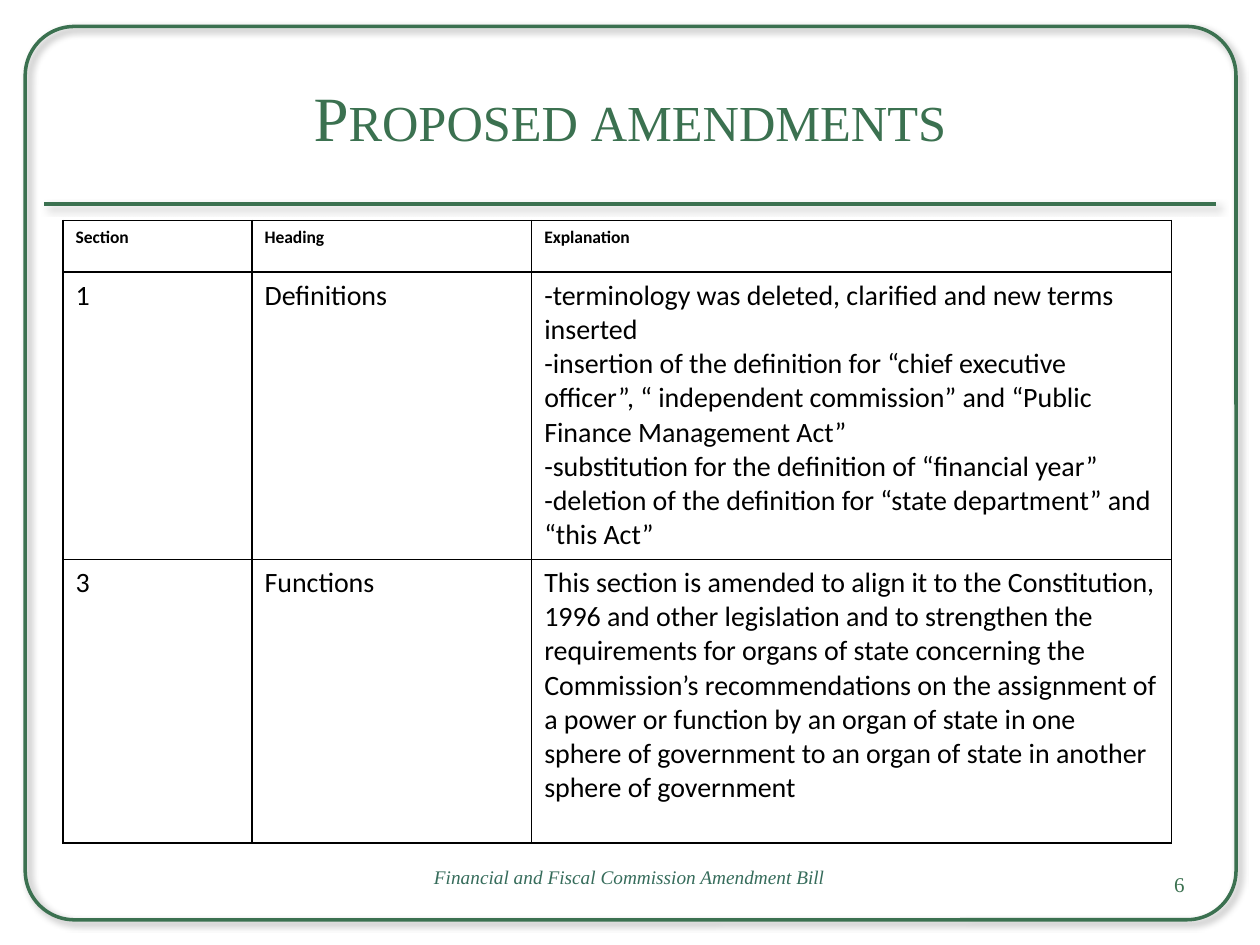
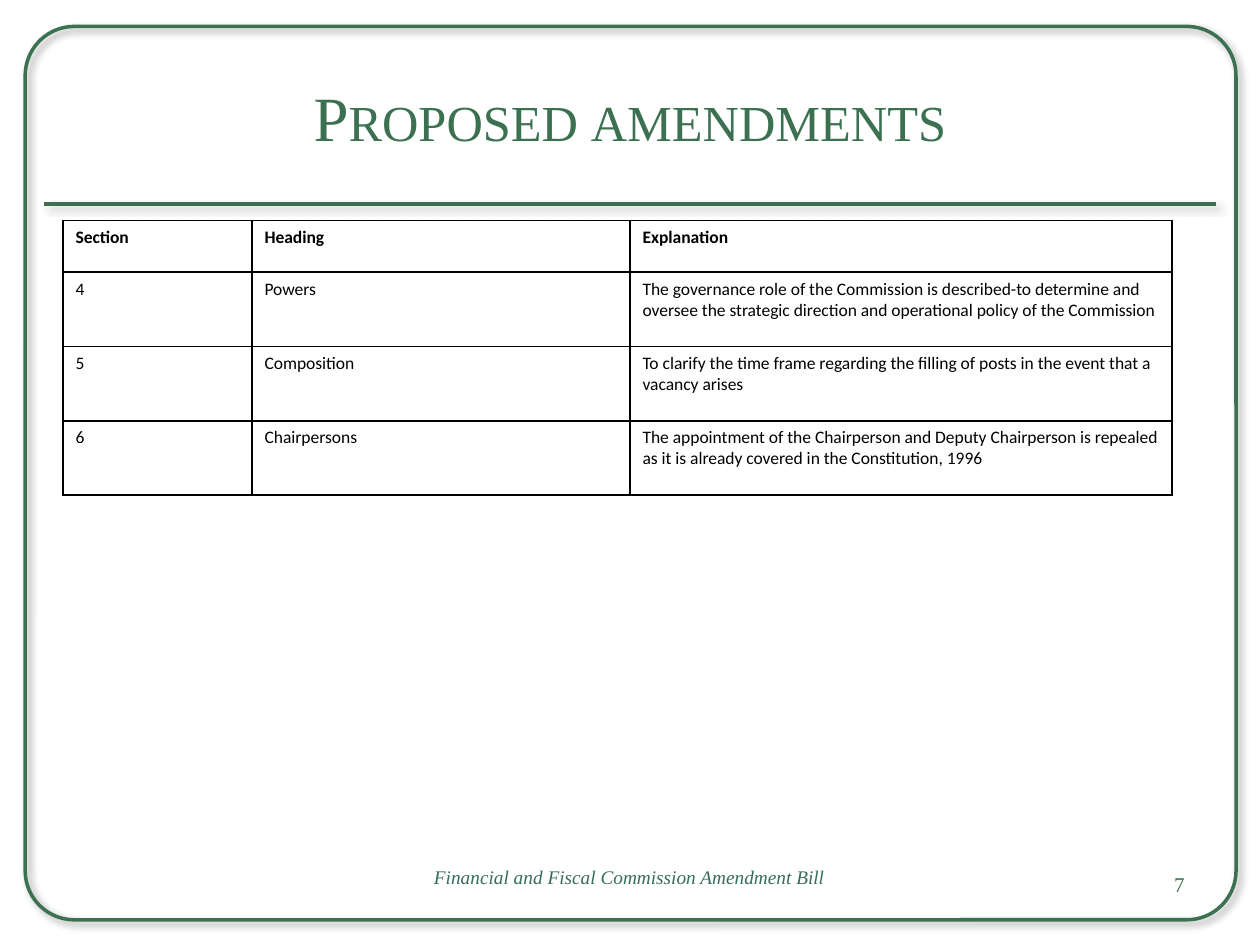
from lxml.etree import SubElement
from pptx import Presentation
from pptx.dml.color import RGBColor
from pptx.enum.shapes import MSO_CONNECTOR, MSO_SHAPE
from pptx.enum.text import MSO_ANCHOR, PP_ALIGN
from pptx.oxml import parse_xml
from pptx.oxml.ns import nsdecls, qn
from pptx.util import Inches, Pt

COLORS = {"green": "3B7150", "footer": "366C5B", "black": "000000", "white": "FFFFFF"}
SERIF = "Times New Roman"
SANS = "Calibri"
HEADERS = ("Section", "Heading", "Explanation")

AMENDMENTS = [
    dict(
        number=6, size=16, columns=(1.5, 2.22, 5.08), heights=(0.41, 2.28, 2.25),
        rows=[
            ("1", "Definitions",
             "-terminology was deleted, clarified and new terms inserted\n"
             "-insertion of the definition for “chief executive officer”, "
             "“ independent commission” and “Public Finance Management Act”\n"
             "-substitution for the definition of “financial year”\n"
             "-deletion of the definition for “state department” and “this Act”"),
            ("3", "Functions",
             "This section is amended to align it to the Constitution, 1996 and other "
             "legislation and to strengthen the requirements for organs of state concerning "
             "the Commission’s recommendations on the assignment of a power or function by "
             "an organ of state in one sphere of government to an organ of state in another "
             "sphere of government"),
        ]),
    dict(
        number=7, size=10, columns=(1.5, 3, 4.3), heights=(0.41, 0.59, 0.59, 0.59),
        rows=[
            ("4", "Powers",
             "The governance role of the Commission is described-to determine and oversee "
             "the strategic direction and operational policy of the Commission"),
            ("5", "Composition",
             "To clarify the time frame regarding the filling of posts in the event that "
             "a vacancy arises"),
            ("6", "Chairpersons",
             "The appointment of the Chairperson and Deputy Chairperson is repealed as it "
             "is already covered in the Constitution, 1996"),
        ]),
]


def color(name):
    return RGBColor.from_string(COLORS[name])


def write(frame, text, size, font=SANS, fill="black", bold=False, italic=False,
          small_caps=False, align=PP_ALIGN.LEFT, anchor=None):
    frame.word_wrap = True
    if anchor is not None:
        frame.vertical_anchor = anchor
    for index, line in enumerate(text.split("\n")):
        para = frame.add_paragraph() if index else frame.paragraphs[0]
        para.alignment = align
        span = para.add_run()
        span.text = line
        span.font.name = font
        span.font.size = Pt(size)
        span.font.bold = bold
        span.font.italic = italic
        span.font.color.rgb = color(fill)
        if small_caps:
            span.font._element.set("cap", "small")


def add_text(page, box, text, **style):
    shape = page.shapes.add_textbox(*map(Inches, box))
    write(shape.text_frame, text, **style)


def outline_with_shadow(shape):
    shape.line.color.rgb = color("green")
    shape.line.width = Pt(2)
    shape._element.spPr.append(parse_xml(
        f'<a:effectLst {nsdecls("a")}>'
        f'<a:outerShdw blurRad="{Pt(4)}" dist="{Pt(3)}" dir="2700000" rotWithShape="0">'
        f'<a:srgbClr val="{COLORS["black"]}"><a:alpha val="40000"/></a:srgbClr>'
        '</a:outerShdw></a:effectLst>'))


def add_frame(page, box):
    left, top, width, _ = box
    frame = page.shapes.add_shape(MSO_SHAPE.ROUNDED_RECTANGLE, *map(Inches, box))
    frame.adjustments[0] = 0.055
    frame.fill.background()
    outline_with_shadow(frame)
    rule_y = top + 1.41
    rule = page.shapes.add_connector(
        MSO_CONNECTOR.STRAIGHT,
        *map(Inches, (left + 0.15, rule_y, left + width - 0.16, rule_y)))
    outline_with_shadow(rule)


def add_title(page, box):
    add_text(page, box, "Proposed amendments", size=36, font=SERIF, fill="green",
             small_caps=True, align=PP_ALIGN.CENTER, anchor=MSO_ANCHOR.MIDDLE)


def add_footer(page, box, number):
    left, top, width, height = box
    add_text(page, (left, top, 4.09, height), "Financial and Fiscal Commission Amendment Bill",
             size=11, font=SERIF, fill="footer", italic=True, align=PP_ALIGN.CENTER)
    add_text(page, (left + width - 2.33, top, 2.33, height), str(number),
             size=12, font=SERIF, fill="green", align=PP_ALIGN.RIGHT,
             anchor=MSO_ANCHOR.MIDDLE)


def add_borders(cell):
    properties = cell._tc.get_or_add_tcPr()
    for index, side in enumerate(("lnL", "lnR", "lnT", "lnB")):
        border = SubElement(properties, qn(f"a:{side}"), w=str(Pt(1)))
        solid = SubElement(border, qn("a:solidFill"))
        SubElement(solid, qn("a:srgbClr"), val=COLORS["black"])
        properties.insert(index, border)


def add_amendment_table(page, left, top, columns, heights, rows, size):
    box = (left, top, sum(columns), sum(heights))
    table = page.shapes.add_table(len(heights), len(columns), *map(Inches, box)).table
    table.horz_banding = False
    for column, width in zip(table.columns, columns):
        column.width = Inches(width)
    for row, height, texts in zip(table.rows, heights, [HEADERS, *rows]):
        row.height = Inches(height)
        header = texts is HEADERS
        for cell, text in zip(row.cells, texts):
            cell.fill.background()
            add_borders(cell)
            write(cell.text_frame, text, size=10 if header else size, bold=header)


def add_amendment_page(deck, number, **table):
    page = deck.slides.add_slide(deck.slide_layouts[6])
    page.background.fill.solid()
    page.background.fill.fore_color.rgb = color("white")
    add_frame(page, (0.2, 0.21, 9.61, 7.09))
    add_title(page, (0.5, 0.3, 9, 1.25))
    add_amendment_table(page, 0.5, 1.75, **table)
    add_footer(page, (2.95, 6.82, 6.55, 0.4), number)


def main():
    deck = Presentation()
    deck.slide_width, deck.slide_height = Inches(10), Inches(7.5)
    for amendment in AMENDMENTS:
        add_amendment_page(deck, **amendment)
    deck.save("out.pptx")


if __name__ == "__main__":
    main()
